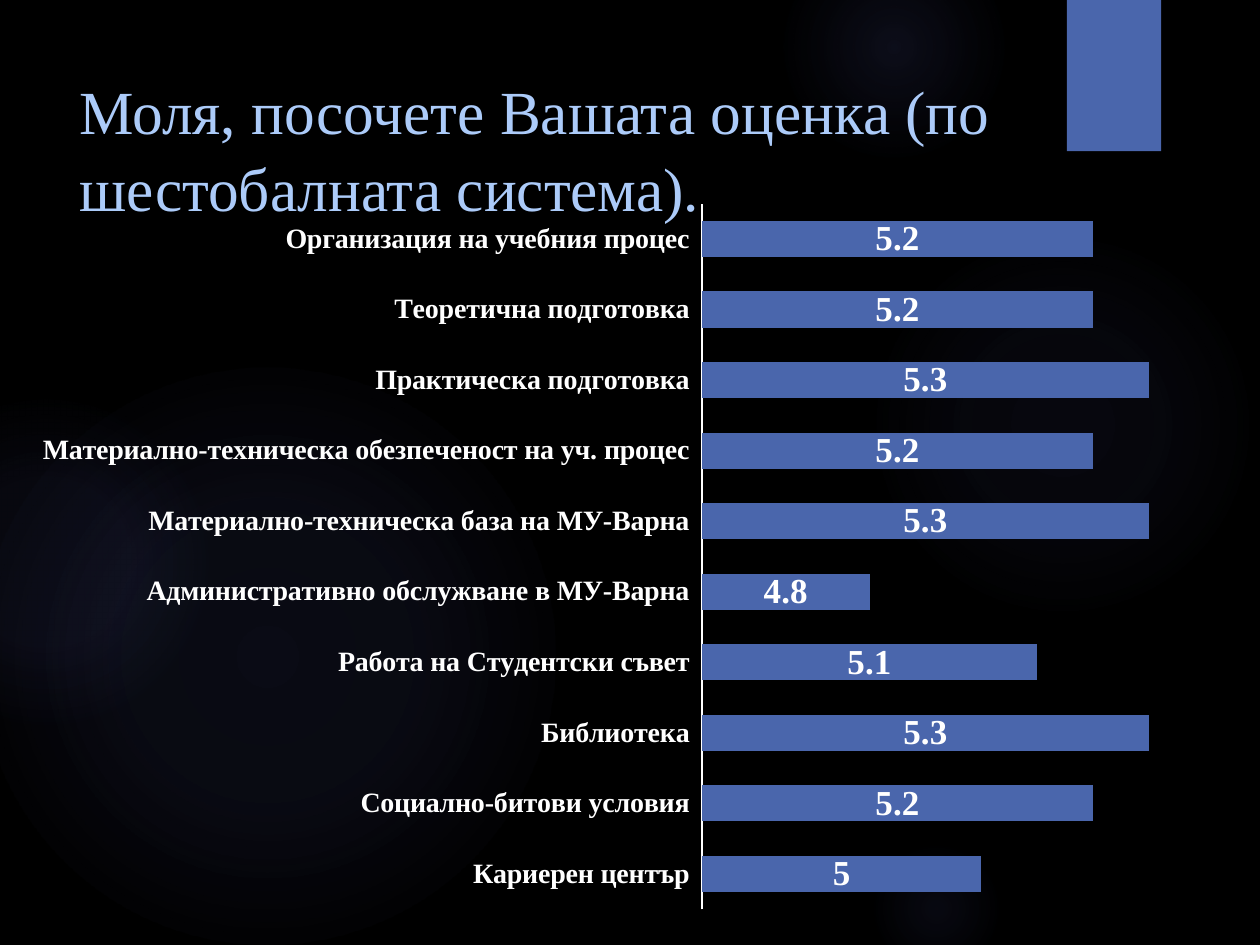
from lxml.etree import SubElement
from pptx import Presentation
from pptx.chart.data import CategoryChartData
from pptx.dml.color import RGBColor
from pptx.enum.chart import XL_CHART_TYPE, XL_LABEL_POSITION, XL_TICK_LABEL_POSITION, XL_TICK_MARK
from pptx.enum.shapes import MSO_SHAPE
from pptx.enum.text import MSO_ANCHOR
from pptx.oxml import parse_xml
from pptx.oxml.ns import nsdecls, qn
from pptx.util import Cm, Pt

TITLE = "Моля, посочете Вашата оценка (по шестобалната система)."
# Ratings from top to bottom
RATINGS = [
    ("Организация на учебния процес", 5.2),
    ("Теоретична подготовка", 5.2),
    ("Практическа подготовка", 5.3),
    ("Материално-техническа обезпеченост на уч. процес", 5.2),
    ("Материално-техническа база на МУ-Варна", 5.3),
    ("Административно обслужване в МУ-Варна", 4.8),
    ("Работа на Студентски съвет", 5.1),
    ("Библиотека", 5.3),
    ("Социално-битови условия", 5.2),
    ("Кариерен център", 5),
]
# Glows: left, top, diameter (cm), then (stop %, opacity %) from the centre out
GLOWS = [
    (17.5, 4.65, 7.82, [(0, 7), (36, 6), (69, 0)]),
    (15.8, -1.27, 4.45, [(0, 14), (36, 7), (73, 0)]),
    (17.5, 16.94, 2.74, [(0, 9), (36, 5), (66, 0)]),
    (-0.43, 7.42, 11.63, [(0, 11), (36, 10), (75, 0)]),
    (-2.34, 8.05, 6.55, [(0, 8), (36, 8), (72, 0)]),
]
PLOT_AREA = {"x": 0.56, "y": 0.02, "w": 0.42, "h": 0.96}

BLACK = RGBColor(0x00, 0x00, 0x00)
WHITE = RGBColor(0xFF, 0xFF, 0xFF)
BLUE = RGBColor(0x4A, 0x66, 0xAC)
GLOW = RGBColor(0x5C, 0x64, 0xB7)
PALE_BLUE = RGBColor(0xAC, 0xCB, 0xF9)
SERIF, SANS = "Times New Roman", "League Spartan"


def style_font(font, color, **values):
    font.color.rgb = color
    for name, value in values.items():
        setattr(font, name, value)


def add_plain_shape(page, kind, *place):
    shape = page.shapes.add_shape(kind, *map(Cm, place))
    shape.shadow.inherit = False
    shape.line.fill.background()
    return shape


def add_glow(page, left, top, size, stops):
    shape = add_plain_shape(page, MSO_SHAPE.OVAL, left, top, size, size)
    shape.fill.background()
    stop_xml = "".join(
        f'<a:gs pos="{position * 1000}"><a:srgbClr val="{GLOW}">'
        f'<a:alpha val="{opacity * 1000}"/></a:srgbClr></a:gs>'
        for position, opacity in stops)
    gradient = parse_xml(
        f'<a:gradFill {nsdecls("a")} rotWithShape="1"><a:gsLst>{stop_xml}</a:gsLst>'
        '<a:path path="circle"><a:fillToRect l="50000" t="50000" r="50000" b="50000"/>'
        '</a:path></a:gradFill>')
    properties = shape.fill._xPr
    properties.replace(properties.find(qn("a:noFill")), gradient)


def add_ribbon(page):
    shape = add_plain_shape(page, MSO_SHAPE.RECTANGLE, 21.51, 0, 1.9, 3.05)
    shape.fill.solid()
    shape.fill.fore_color.rgb = BLUE
    effects = shape._element.spPr.find(qn("a:effectLst"))
    effects.append(parse_xml(
        f'<a:outerShdw {nsdecls("a")} blurRad="{Pt(3)}" dist="{Pt(2)}" dir="5400000" '
        f'rotWithShape="0"><a:srgbClr val="{BLACK}"><a:alpha val="45000"/></a:srgbClr>'
        '</a:outerShdw>'))


def add_title(page):
    box = page.shapes.add_textbox(Cm(1.35), Cm(1.27), Cm(19.61), Cm(3.89))
    frame = box.text_frame
    frame.word_wrap = True
    frame.vertical_anchor = MSO_ANCHOR.TOP
    para = frame.paragraphs[0]
    para.line_spacing = 1.05
    span = para.add_run()
    span.text = TITLE
    style_font(span.font, PALE_BLUE, name=SERIF, size=Pt(35))


def add_rating_chart(page):
    data = CategoryChartData()
    bottom_up = RATINGS[::-1]
    data.categories = [label for label, _ in bottom_up]
    data.add_series("Series 1", [value for _, value in bottom_up])
    chart = page.shapes.add_chart(XL_CHART_TYPE.BAR_STACKED, Cm(0.64), Cm(3.81),
                                  Cm(24.13), Cm(14.82), data).chart
    chart.has_legend = chart.has_title = False
    style_font(chart.font, WHITE, name=SANS, size=Pt(18))

    # Bars and their values
    plot = chart.plots[0]
    for name, value in {"gap_width": 95, "overlap": 100, "vary_by_categories": False,
                        "has_data_labels": True}.items():
        setattr(plot, name, value)
    bars = plot.series[0].format.fill
    bars.solid()
    bars.fore_color.rgb = BLUE
    labels = plot.data_labels
    for name, value in {"show_value": True, "number_format": "General",
                        "number_format_is_linked": False,
                        "position": XL_LABEL_POSITION.CENTER}.items():
        setattr(labels, name, value)
    style_font(labels.font, WHITE, name=SERIF, size=Pt(20), bold=True)

    # Axes
    scale, names = chart.value_axis, chart.category_axis
    for name, value in {"minimum_scale": 4.5, "maximum_scale": 5.4, "visible": False,
                        "has_major_gridlines": False}.items():
        setattr(scale, name, value)
    names.major_tick_mark = names.minor_tick_mark = XL_TICK_MARK.NONE
    names.tick_label_position = XL_TICK_LABEL_POSITION.LOW
    names.format.line.color.rgb = WHITE
    names.format.line.width = Pt(0.75)
    style_font(names.tick_labels.font, WHITE, name=SERIF, size=Pt(16), bold=True)

    # Fixed plot area, so the labels have room on the left
    area = chart._chartSpace.find(f".//{qn('c:plotArea')}")
    layout = area.find(qn("c:layout"))
    if layout is None:
        layout = parse_xml(f'<c:layout {nsdecls("c")}/>')
        area.insert(0, layout)
    manual = SubElement(layout, qn("c:manualLayout"))
    settings = {"layoutTarget": "inner", "xMode": "edge", "yMode": "edge", **PLOT_AREA}
    for tag, value in settings.items():
        SubElement(manual, qn(f"c:{tag}")).set("val", str(value))


def main():
    deck = Presentation()
    deck.slide_width, deck.slide_height = Cm(25.4), Cm(19.05)
    page = deck.slides.add_slide(deck.slide_layouts[6])
    page.background.fill.solid()
    page.background.fill.fore_color.rgb = BLACK
    for glow in GLOWS:
        add_glow(page, *glow)
    add_ribbon(page)
    add_title(page)
    add_rating_chart(page)
    deck.save("out.pptx")


if __name__ == "__main__":
    main()
